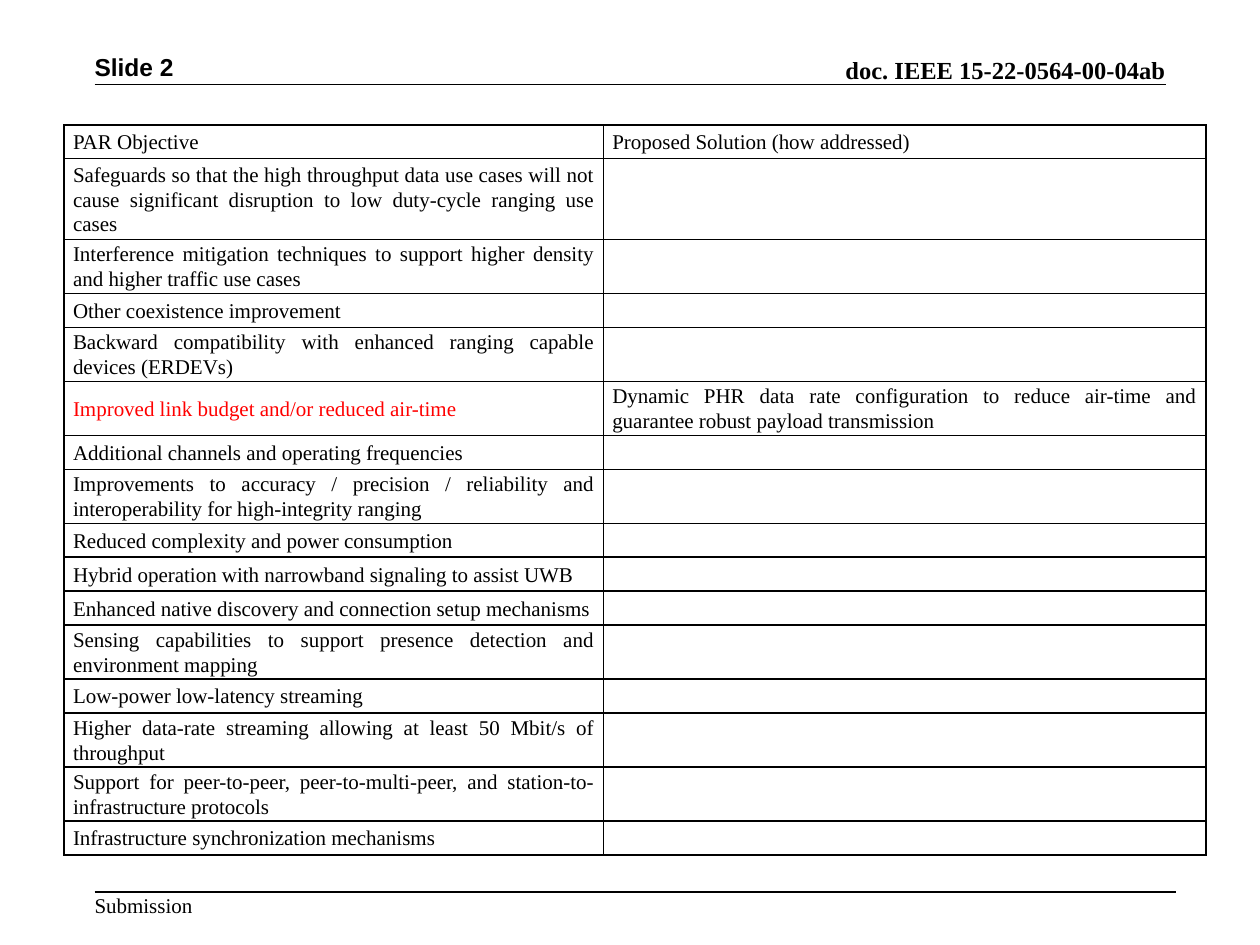
from dataclasses import dataclass

from lxml.etree import SubElement
from pptx import Presentation
from pptx.dml.color import RGBColor as Rgb
from pptx.enum.shapes import MSO_CONNECTOR as Conn
from pptx.enum.text import MSO_ANCHOR as Anchor, MSO_AUTO_SIZE as Auto, PP_ALIGN as Align
from pptx.oxml.ns import qn
from pptx.util import Inches, Pt


@dataclass(frozen=True)
class Theme:
    serif: str = "Times New Roman"
    sans: str = "Arial"
    ink: str = "000000"
    mark: str = "FF0000"
    body: int = 12
    head: int = 14
    rule: int = 1


GOALS = [
    "Safeguards so that the high throughput data use cases will not cause "
    "significant disruption to low duty-cycle ranging use cases",
    "Interference mitigation techniques to support higher density and higher traffic use cases",
    "Other coexistence improvement",
    "Backward compatibility with enhanced ranging capable devices (ERDEVs)",
    "Improved link budget and/or reduced air-time",
    "Additional channels and operating frequencies",
    "Improvements to accuracy / precision / reliability and interoperability "
    "for high-integrity ranging",
    "Reduced complexity and power consumption",
    "Hybrid operation with narrowband signaling to assist UWB",
    "Enhanced native discovery and connection setup mechanisms",
    "Sensing capabilities to support presence detection and environment mapping",
    "Low-power low-latency streaming",
    "Higher data-rate streaming allowing at least 50 Mbit/s of throughput",
    "Support for peer-to-peer, peer-to-multi-peer, and station-to-infrastructure protocols",
    "Infrastructure synchronization mechanisms",
]
FOCUS = "Improved link budget and/or reduced air-time"
ANSWER = ("Dynamic PHR data rate configuration to reduce air-time "
          "and guarantee robust payload transmission")


class Page:
    def __init__(self, slide, theme):
        self.slide = slide
        self.theme = theme

    def run(self, para, text, size, face=None, color=None, bold=False):
        run = para.add_run()
        run.text = text
        font = run.font
        font.size, font.bold = Pt(size), bold
        font.name = face or self.theme.serif
        font.color.rgb = Rgb.from_string(color or self.theme.ink)

    def label(self, box, text, size, face=None, bold=False,
              align=Align.LEFT, anchor=Anchor.BOTTOM):
        shape = self.slide.shapes.add_textbox(*map(Inches, box))
        frame = shape.text_frame
        frame.word_wrap = True
        frame.auto_size = Auto.SHAPE_TO_FIT_TEXT
        frame.vertical_anchor = anchor
        frame.margin_left = frame.margin_right = 0
        frame.margin_top = frame.margin_bottom = 0
        para = frame.paragraphs[0]
        para.alignment = align
        self.run(para, text, size, face, bold=bold)

    def rule(self, left, right, top):
        line = self.slide.shapes.add_connector(
            Conn.STRAIGHT, Inches(left), Inches(top), Inches(right), Inches(top))
        line.line.color.rgb = Rgb.from_string(self.theme.ink)
        line.line.width = Pt(self.theme.rule)
        SubElement(line._element.spPr, qn("a:effectLst"))

    def frame(self, cell):
        """Draw all four borders of a cell and clear its fill."""
        props = cell._tc.get_or_add_tcPr()
        for side in "LRTB":
            edge = SubElement(props, qn(f"a:ln{side}"), w=str(Pt(self.theme.rule)))
            fill = SubElement(edge, qn("a:solidFill"))
            SubElement(fill, qn("a:srgbClr"), val=self.theme.ink)
        cell.fill.background()

    def cell(self, cell, text, color):
        self.frame(cell)
        cell.vertical_anchor = Anchor.MIDDLE
        cell.margin_left = cell.margin_right = Inches(0.07)
        cell.margin_top = cell.margin_bottom = 0
        para = cell.text_frame.paragraphs[0]
        if text:
            para.alignment = Align.JUSTIFY
            para.line_spacing = 1.07
            para.space_after = Pt(8)
            self.run(para, text, self.theme.body, color=color)
        else:
            # Keeps an empty cell from growing to the default type size
            SubElement(para._p, qn("a:endParaRPr"), sz=str(self.theme.body * 100))

    def table(self, left, top, widths, height, rows):
        """Rows hold (text, color) pairs; height is the least row height."""
        grid = self.slide.shapes.add_table(
            len(rows), len(widths), Inches(left), Inches(top),
            Inches(sum(widths)), Inches(height * len(rows))).table
        grid.first_row = grid.horz_banding = False
        for col, width in zip(grid.columns, widths):
            col.width = Inches(width)
        for line, row in zip(grid.rows, rows):
            line.height = Inches(height)
            for cell, (text, color) in zip(line.cells, row):
                self.cell(cell, text, color)


def main():
    theme = Theme()
    deck = Presentation()
    deck.slide_width, deck.slide_height = Inches(10), Inches(7.5)
    page = Page(deck.slides.add_slide(deck.slide_layouts[6]), theme)

    page.label((3.43, 0.43, 5.82, 0.24), "doc. IEEE 15-22-0564-00-04ab",
               theme.head, bold=True, align=Align.RIGHT)
    page.rule(0.75, 9.25, 0.67)
    page.label((0.75, 7.08, 0.78, 0.2), "Submission", theme.body, anchor=Anchor.TOP)
    page.rule(0.75, 9.33, 7.08)
    page.label((0.75, 0.41, 1.75, 0.24), "Slide 2", theme.head, theme.sans, bold=True)

    rows = [[("PAR Objective", theme.ink), ("Proposed Solution (how addressed)", theme.ink)]]
    for goal in GOALS:
        hit = goal == FOCUS
        rows.append([(goal, theme.mark if hit else theme.ink),
                     (ANSWER if hit else "", theme.ink)])
    page.table(0.51, 0.99, (4.28, 4.78), 0.27, rows)
    deck.save("out.pptx")


if __name__ == "__main__":
    main()
